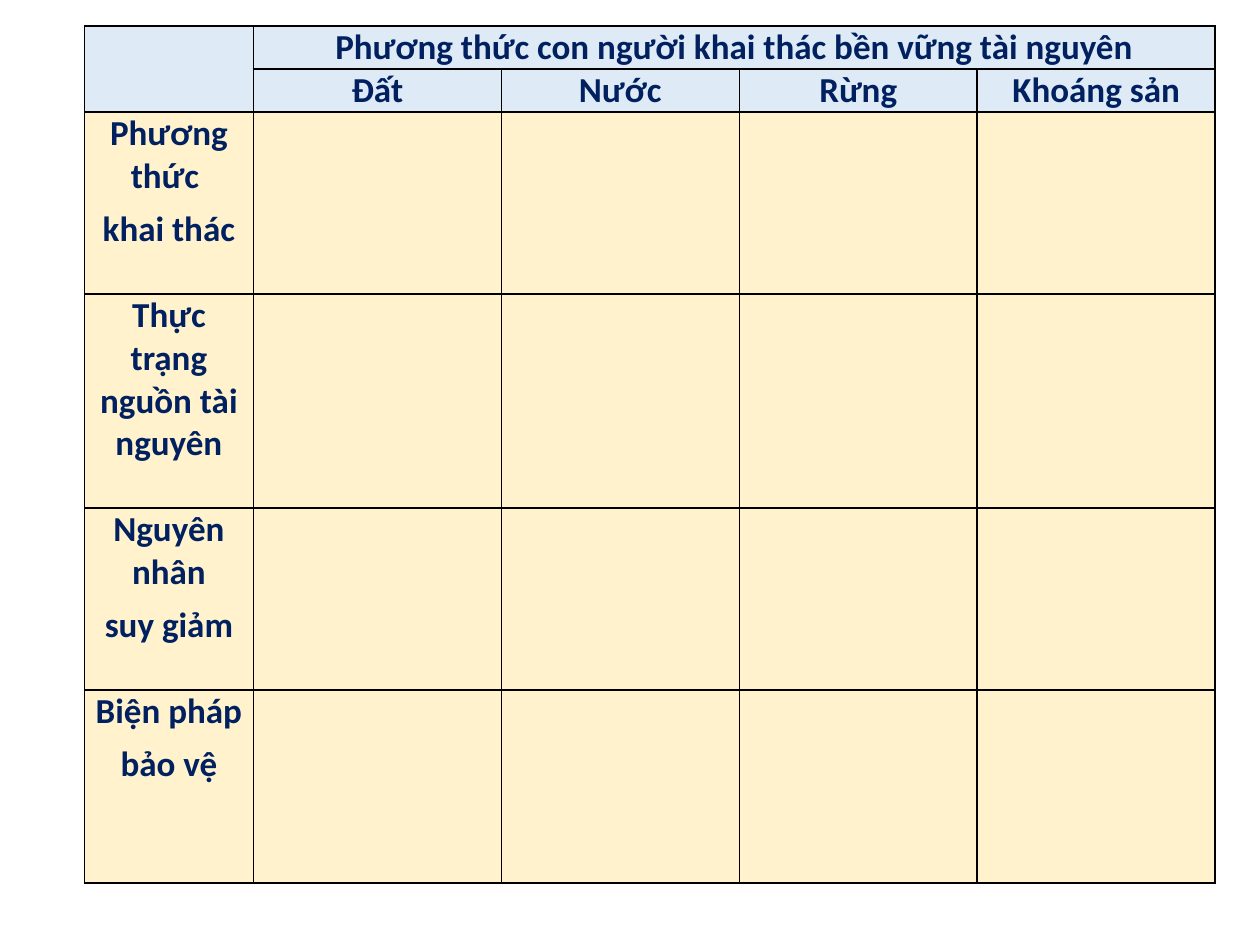
"""Build a slide with a blank worksheet table on sustainable use of resources."""
from lxml.etree import SubElement
from pptx import Presentation
from pptx.dml.color import RGBColor
from pptx.enum.text import MSO_ANCHOR as Anchor, PP_ALIGN as Align
from pptx.oxml.ns import qn
from pptx.util import Pt


def color(code):
    return RGBColor.from_string(code)


def add_borders(cell, code, width):
    properties = cell._tc.get_or_add_tcPr()
    for index, side in enumerate(("lnL", "lnR", "lnT", "lnB")):
        line = properties.makeelement(qn(f"a:{side}"), {"w": str(Pt(width))})
        fill = SubElement(line, qn("a:solidFill"))
        SubElement(fill, qn("a:srgbClr"), val=code)
        properties.insert(index, line)


HEADER_FILL, BODY_FILL, INK, BORDER = "DEEAF6", "FFF2CC", "002060", "000000"
COLUMN_WIDTHS = [96.5, 141.7, 136, 136, 136]
ROW_HEIGHTS = [24.5, 24.5, 104, 122.3, 104, 110.3]
ROWS = [
    ["", "Phương thức con người khai thác bền vững tài nguyên"],
    ["", "Đất", "Nước", "Rừng", "Khoáng sản"],
    ["Phương thức \nkhai thác"],
    ["Thực trạng nguồn tài nguyên"],
    ["Nguyên nhân\nsuy giảm"],
    ["Biện pháp\nbảo vệ"],
]

deck = Presentation()
deck.slide_width, deck.slide_height = Pt(720), Pt(540)
page = deck.slides.add_slide(deck.slide_layouts[6])

frame = page.shapes.add_table(
    len(ROWS), len(COLUMN_WIDTHS), Pt(48.3), Pt(15),
    Pt(sum(COLUMN_WIDTHS)), Pt(sum(ROW_HEIGHTS)))
table = frame.table
for column, width in zip(table.columns, COLUMN_WIDTHS):
    column.width = Pt(width)
for row, height in zip(table.rows, ROW_HEIGHTS):
    row.height = Pt(height)

for row_index, texts in enumerate(ROWS):
    for column_index in range(len(COLUMN_WIDTHS)):
        cell = table.cell(row_index, column_index)
        cell.text = texts[column_index] if column_index < len(texts) else ""
        cell.margin_left = cell.margin_right = Pt(4.3)
        cell.margin_top = cell.margin_bottom = 0
        cell.vertical_anchor = Anchor.TOP
        cell.fill.solid()
        cell.fill.fore_color.rgb = color(HEADER_FILL if row_index < 2 else BODY_FILL)
        add_borders(cell, BORDER, 1)
        for para in cell.text_frame.paragraphs:
            para.alignment = Align.CENTER
            para.space_before = Pt(6)
            para.font.name = "Calibri"
            para.font.size = Pt(20)
            para.font.bold = True
            para.font.color.rgb = color(INK)

table.cell(0, 0).merge(table.cell(1, 0))
table.cell(0, 1).merge(table.cell(0, 4))

deck.save("out.pptx")
